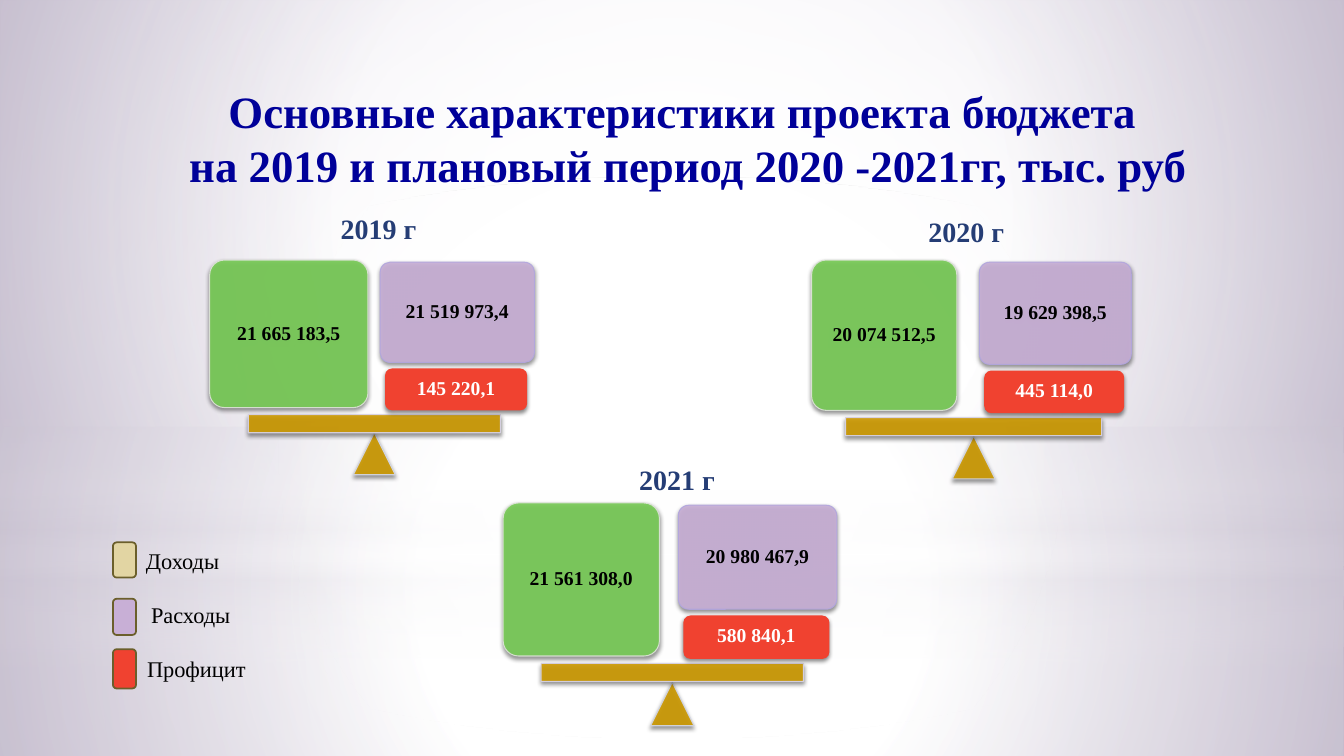
from lxml import etree
from pptx import Presentation
from pptx.dml.color import RGBColor
from pptx.enum.shapes import MSO_SHAPE as SHAPE
from pptx.enum.text import MSO_ANCHOR as ANCHOR, MSO_AUTO_SIZE as AUTO, PP_ALIGN as ALIGN
from pptx.oxml import parse_xml
from pptx.oxml.ns import qn
from pptx.util import Inches, Pt

NS = 'xmlns:a="http://schemas.openxmlformats.org/drawingml/2006/main"'
FONT = "Times New Roman"
C = {
    "white": "FFFFFF", "black": "000000", "haze": "C9C2D1", "violet": "A593BA",
    "title": "000099", "year": "253D75", "income": "77CB55", "income_line": "DEE4D9",
    "expense": "C8AFD6", "expense_line": "B2A6DF", "surplus": "F04230",
    "gold": "CC9900", "fulcrum_line": "D3D9ED", "beam_line": "D8D4EB",
    "sand": "E2D5A3", "legend_line": "6B5F2B",
}


def rgb(name):
    """Return the palette colour as an RGBColor."""
    return RGBColor.from_string(C[name])


def gradient(stops, focus=None):
    """Build a gradient fill, circular if a focus rectangle is given."""
    gs = "".join(
        f'<a:gs pos="{pos * 1000}"><a:srgbClr val="{C[color]}">'
        f'<a:alpha val="{alpha * 1000}"/></a:srgbClr></a:gs>'
        for pos, color, alpha in stops)
    if focus:
        l, t, r, b = (v * 1000 for v in focus)
        way = (f'<a:path path="circle"><a:fillToRect l="{l}" t="{t}" '
               f'r="{r}" b="{b}"/></a:path>')
    else:
        way = '<a:lin ang="5400000" scaled="0"/>'
    return parse_xml(f'<a:gradFill {NS} rotWithShape="1"><a:gsLst>{gs}</a:gsLst>{way}</a:gradFill>')


def add_text(tf, lines, size, color, bold=False, align=ALIGN.LEFT, spacing=None):
    """Write one paragraph per line into a text frame."""
    for i, line in enumerate(lines):
        p = tf.paragraphs[0] if i == 0 else tf.add_paragraph()
        p.alignment = align
        if spacing:
            p.line_spacing = spacing
        r = p.add_run()
        r.text = line
        r.font.name, r.font.size, r.font.bold = FONT, Pt(size), bold
        r.font.color.rgb = rgb(color)


def add_label(s, x, y, w, h, text, size, color, bold=False):
    """Add a one-line text box."""
    tf = s.shapes.add_textbox(Inches(x), Inches(y), Inches(w), Inches(h)).text_frame
    tf.word_wrap = False
    add_text(tf, [text], size, color, bold)


def add_block(s, kind, x, y, w, h, fill, line=None, width=0.75, alpha=100, shadow=True):
    """Add a filled shape with an optional outline, opacity and shadow."""
    sp = s.shapes.add_shape(kind, Inches(x), Inches(y), Inches(w), Inches(h))
    sp.shadow.inherit = False
    sp.fill.solid()
    sp.fill.fore_color.rgb = rgb(fill)
    if line:
        sp.line.color.rgb = rgb(line)
        sp.line.width = Pt(width)
    else:
        sp.line.fill.background()
    spPr = sp._element.spPr
    if alpha < 100:
        for clr in spPr.iter(qn("a:srgbClr")):
            etree.SubElement(clr, qn("a:alpha")).set("val", str(alpha * 1000))
    if shadow:
        spPr.find(qn("a:effectLst")).append(parse_xml(
            f'<a:outerShdw {NS} blurRad="{Pt(3.1)}" dist="{Pt(1.8)}" dir="5400000" '
            f'rotWithShape="0"><a:srgbClr val="{C["black"]}"><a:alpha val="45000"/>'
            '</a:srgbClr></a:outerShdw>'))
    return sp


def add_amount(sp, text, color, anchor):
    """Write an amount inside a block."""
    tf = sp.text_frame
    tf.word_wrap = True
    tf.vertical_anchor = anchor
    tf.margin_left = tf.margin_right = tf.margin_top = tf.margin_bottom = Inches(0.08)
    add_text(tf, [text], 14, color, True, ALIGN.CENTER, 0.9)


def add_background(s, w, h):
    """Paint the violet background and its layers of soft light."""
    s.background.fill.solid()
    bgPr = s._element.cSld.bg.bgPr
    bgPr.replace(bgPr[0], gradient(
        [(0, "white", 100), (42, "white", 100), (100, "violet", 100)], (24, 44, 24, 12)))
    centre = (50, 50, 50, 50)
    band = [(0, "white", 0), (29, "white", 30), (45, "haze", 40),
            (55, "white", 26), (65, "haze", 60), (100, "white", 0)]
    for horizon, band_top, glow_end, extra in ((5.58, 4.12, 56, 0), (4.23, 2.9, 54, 1)):
        floor = [(0, "white", 91 + extra), (37, "white", 76 + extra), (100, "haze", 79 + extra)]
        wall = [(0, "white", 89 + extra), (48, "white", 62 + extra), (100, "haze", 79 + extra)]
        glow = [(0, "white", 100), (glow_end, "white", 0)]
        for kind, top, height, stops, focus in (
                (SHAPE.RECTANGLE, horizon, h - horizon, floor, centre),
                (SHAPE.RECTANGLE, 0, horizon, wall, centre),
                (SHAPE.RECTANGLE, band_top, 2.5, band, None),
                (SHAPE.OVAL, 1.75, 5.58, glow, centre)):
            sp = add_block(s, kind, 0, top, w, height, "white", shadow=False)
            spPr = sp._element.spPr
            spPr.replace(spPr.find(qn("a:solidFill")), gradient(stops, focus))


def add_title(s, x, y, w, h, lines):
    """Format the title placeholder and bring it in front of the background."""
    title = s.shapes.title
    title.left, title.top, title.width, title.height = map(Inches, (x, y, w, h))
    tf = title.text_frame
    tf.auto_size = AUTO.NONE
    tf.word_wrap = False
    tf.vertical_anchor = ANCHOR.TOP
    add_text(tf, lines, 32, "title", True, ALIGN.CENTER, 1.0)
    title._element.getparent().append(title._element)


def add_scale(s, x, y, w, h, income_w, beam_w, amounts):
    """Draw a scale with income on the left, expense and surplus on the right."""
    income, expense, surplus = amounts
    middle = x + 0.507 * w
    leg = 0.195 * h
    blocks = (
        (x, y, income_w, 0.687 * h, "income", "income_line", 90, 0.1, income, "black", ANCHOR.MIDDLE),
        (x + 0.525 * w, y + 0.01 * h, 0.475 * w, 0.467 * h, "expense", "expense_line", 90, 0.1,
         expense, "black", ANCHOR.MIDDLE),
        (x + 0.54 * w, y + 0.505 * h, 0.438 * w, leg, "surplus", None, 100, 0.167,
         surplus, "white", ANCHOR.TOP))
    add_block(s, SHAPE.ISOSCELES_TRIANGLE, middle - leg / 2, y + h - leg, leg, leg,
              "gold", "fulcrum_line", alpha=90)
    add_block(s, SHAPE.RECTANGLE, middle - beam_w / 2, y + 0.72 * h, beam_w, 0.18,
              "gold", "beam_line", alpha=90)
    for left, top, width, height, fill, line, alpha, radius, text, color, anchor in blocks:
        sp = add_block(s, SHAPE.ROUNDED_RECTANGLE, left, top, width, height, fill, line, alpha=alpha)
        sp.adjustments[0] = radius
        add_amount(sp, text, color, anchor)


def add_legend(s, x, y, rows):
    """Draw the colour key, each row offset from the legend's corner."""
    for text, fill, top, height, label_x, label_y, label_w in rows:
        add_block(s, SHAPE.ROUNDED_RECTANGLE, x, y + top, 0.23, height, fill,
                  "legend_line", 1.25, shadow=False)
        add_label(s, x + label_x, y + label_y, label_w, 0.37, text, 16, "black")


def main():
    """Build the budget slide."""
    prs = Presentation()
    prs.slide_width, prs.slide_height = Inches(13.33), Inches(7.5)
    s = prs.slides.add_slide(prs.slide_layouts[5])
    add_background(s, 13.33, 7.5)
    add_title(s, 1.73, 0.78, 10.19, 1.18, [
        "Основные характеристики проекта бюджета ",
        "на 2019 и плановый период 2020 -2021гг, тыс. руб"])
    years = (
        ("2019 г", 3.28, 2.05, (2.08, 2.58, 3.22, 2.13), 1.57, 2.5,
         ("21 665 183,5", "21 519 973,4", "145 220,1")),
        ("2020 г", 9.11, 2.08, (8.05, 2.58, 3.17, 2.17), 1.44, 2.54,
         ("20 074 512,5", "19 629 398,5", "445 114,0")),
        ("2021 г", 6.24, 4.54, (4.99, 4.99, 3.31, 2.21), 1.55, 2.6,
         ("21 561 308,0", "20 980 467,9", "580 840,1")))
    for year, x, y, box, income_w, beam_w, amounts in years:
        add_scale(s, *box, income_w, beam_w, amounts)
        add_label(s, x, y, 0.96, 0.44, year, 20, "year", True)
    add_legend(s, 1.12, 5.38, (
        ("Доходы", "sand", 0, 0.35, 0.23, 0, 0.94),
        ("Расходы", "expense", 0.56, 0.36, 0.28, 0.53, 1),
        ("Профицит", "surplus", 1.06, 0.39, 0.24, 1.07, 1.19)))
    prs.save("out.pptx")


if __name__ == "__main__":
    main()
